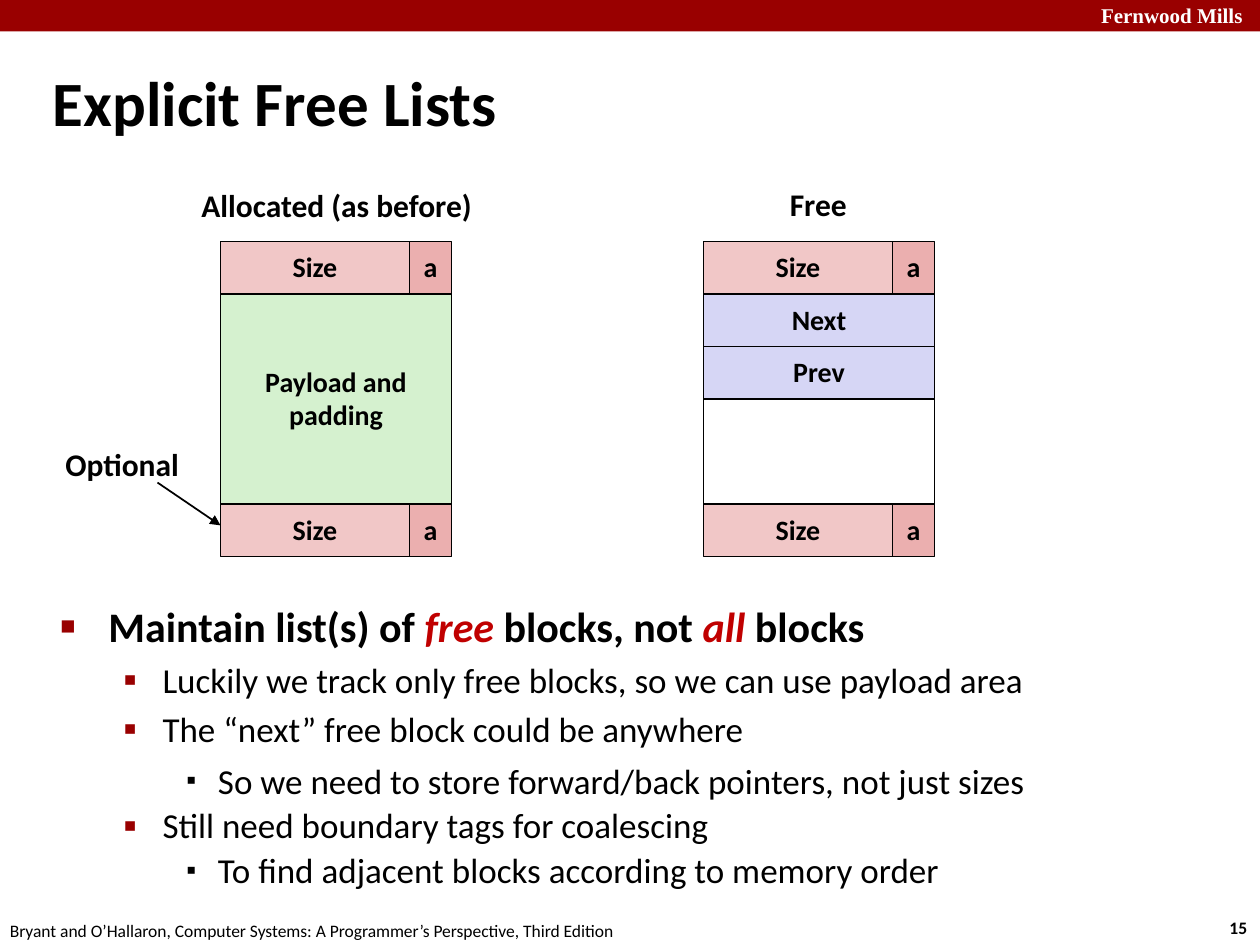
from dataclasses import dataclass

from lxml import etree
from pptx import Presentation, util as u
from pptx.dml.color import RGBColor
from pptx.enum import shapes, text
from pptx.oxml import ns


@dataclass(frozen=True)
class Theme:
    font: str = "Calibri"
    brand_font: str = "Times New Roman"
    ink: str = "000000"
    white: str = "FFFFFF"
    maroon: str = "990000"
    accent: str = "C00000"
    tag: str = "F1C7C7"
    flag: str = "EBAFAF"
    payload: str = "D5F1CF"
    pointer: str = "D6D6F5"
    title: int = 36
    lead: int = 24
    body: int = 20
    label: int = 18
    cell: int = 16
    brand: int = 12
    small: int = 10


T = Theme()
UNIT = 1 / 12  # inches; the block diagrams sit on this grid
ROW, SIZE_W, FLAG_W = 5 * UNIT, 18 * UNIT, 4 * UNIT
TOP = 23 * UNIT

# level: (size, bold, left margin, hanging indent, bullet, bullet colour, bullet percent)
LEVELS = [
    (T.lead, True, 0.38, 0.38, "■", T.maroon, 60),
    (T.body, False, 0.81, 0.31, "▪", T.maroon, 110),
    (T.body, False, 1.25, 0.25, "▪", T.ink, 80),
]


def rgb(value):
    return RGBColor.from_string(value)


def add_child(parent, tag, **attrs):
    return etree.SubElement(parent, ns.qn(tag), attrs)


def add_run(p, content, size, color=T.ink, font=T.font, bold=False, italic=False):
    r = p.add_run()
    r.text = content
    f = r.font
    f.size, f.name, f.bold, f.italic = u.Pt(size), font, bold, italic
    f.color.rgb = rgb(color)


class SlideBuilder:
    def __init__(self, prs, theme):
        self.theme = theme
        self.s = prs.slides.add_slide(prs.slide_layouts[1])

    def place(self, sp, x, y, w, h):
        sp.left, sp.top, sp.width, sp.height = map(u.Inches, (x, y, w, h))

    def title(self, content, *box):
        sp = self.s.shapes.title
        self.place(sp, *box)
        tf = sp.text_frame
        tf.auto_size = text.MSO_AUTO_SIZE.NONE
        tf.vertical_anchor = text.MSO_ANCHOR.MIDDLE
        p = tf.paragraphs[0]
        p.alignment, p.line_spacing = text.PP_ALIGN.LEFT, 0.87
        add_run(p, content, self.theme.title, bold=True)

    def bullets(self, items, *box):
        """Each item is (level, line spacing, pieces); every second piece is emphasised."""
        sp = self.s.placeholders[1]
        self.place(sp, *box)
        tf = sp.text_frame
        tf.auto_size = text.MSO_AUTO_SIZE.NONE
        for i, (level, spacing, pieces) in enumerate(items):
            size, bold, margin, hang, mark, color, percent = LEVELS[level]
            p = tf.add_paragraph() if i else tf.paragraphs[0]
            p.level, p.line_spacing = level, spacing
            p.space_before = u.Pt(size * 0.2)
            pPr = p._p.get_or_add_pPr()
            pPr.set("marL", str(u.Inches(margin)))
            pPr.set("indent", str(-u.Inches(hang)))
            add_child(add_child(pPr, "a:buClr"), "a:srgbClr", val=color)
            add_child(pPr, "a:buSzPct", val=str(percent * 1000))
            add_child(pPr, "a:buFont", typeface="Arial")
            add_child(pPr, "a:buChar", char=mark)
            for j, piece in enumerate(pieces):
                strong = j % 2 == 1
                add_run(p, piece, size, self.theme.accent if strong else self.theme.ink,
                        bold=bold, italic=strong)

    def label(self, content, x, y, w, h, size=T.label, bold=True, **fmt):
        tf = self.s.shapes.add_textbox(*map(u.Inches, (x, y, w, h))).text_frame
        tf.word_wrap = False
        add_run(tf.paragraphs[0], content, size, bold=bold, **fmt)

    def rect(self, x, y, w, h, fill, content="", outlined=True):
        sp = self.s.shapes.add_shape(shapes.MSO_SHAPE.RECTANGLE, *map(u.Inches, (x, y, w, h)))
        sp.shadow.inherit = False
        sp.fill.solid()
        sp.fill.fore_color.rgb = rgb(fill)
        if outlined:
            sp.line.color.rgb, sp.line.width = rgb(self.theme.ink), u.Pt(1)
        else:
            sp.line.fill.background()
        if not content:
            return
        tf = sp.text_frame
        tf.word_wrap = False
        tf.vertical_anchor = text.MSO_ANCHOR.MIDDLE
        for i, line in enumerate(content.split("\n")):
            p = tf.add_paragraph() if i else tf.paragraphs[0]
            p.alignment, p.line_spacing = text.PP_ALIGN.CENTER, 0.98
            add_run(p, line, self.theme.cell, bold=True)

    def block(self, x, fields):
        """Draw a memory block: fields (text, rows, fill) between two boundary tags."""
        y = TOP + ROW
        for content, rows, fill in fields:
            self.rect(x, y, SIZE_W + FLAG_W, rows * ROW, fill, content)
            y += rows * ROW
        for tag_y in (TOP, y):
            self.rect(x, tag_y, SIZE_W, ROW, self.theme.tag, "Size")
            self.rect(x + SIZE_W, tag_y, FLAG_W, ROW, self.theme.flag, "a")

    def arrow(self, x1, y1, x2, y2):
        c = self.s.shapes.add_connector(shapes.MSO_CONNECTOR.STRAIGHT,
                                        *map(u.Inches, (x1, y1, x2, y2)))
        c.line.color.rgb, c.line.width = rgb(self.theme.ink), u.Pt(1)
        add_child(c.line._get_or_add_ln(), "a:tailEnd", type="triangle")
        add_child(c._element.spPr, "a:effectLst")


def main():
    prs = Presentation()
    prs.slide_width, prs.slide_height = u.Inches(10), u.Inches(7.5)
    b = SlideBuilder(prs, T)

    b.rect(0, 0, 10, 0.25, T.maroon, outlined=False)
    b.label("Fernwood Mills", 8.64, -0.03, 1.43, 0.3, size=T.brand,
            color=T.white, font=T.brand_font)
    b.label("15", 9.66, 7.23, 0.37, 0.27, size=T.small)
    b.label("Bryant and O’Hallaron, Computer Systems: A Programmer’s Perspective, Third Edition",
            -0.02, 7.25, 5.08, 0.27, size=T.small, bold=False)

    b.title("Explicit Free Lists", 0.32, 0.53, 6.64, 0.63)
    b.bullets([
        (0, 0.85, ["Maintain list(s) of ", "free", " blocks, not ", "all", " blocks"]),
        (1, 1.0, ["Luckily we track only free blocks, so we can use payload area"]),
        (1, 1.0, ["The “next” free block could be anywhere"]),
        (2, 1.07, ["So we need to store forward/back pointers, not just sizes"]),
        (1, 0.9, ["Still need boundary tags for coalescing"]),
        (2, 0.9, ["To find adjacent blocks according to memory order"]),
    ], 0.38, 4.78, 9.09, 2.02)

    b.block(21 * UNIT, [("Payload and\npadding", 4, T.payload)])
    b.block(67 * UNIT, [("Next", 1, T.pointer), ("Prev", 1, T.pointer), ("", 2, T.white)])

    b.label("Allocated (as before)", 1.5, 1.43, 2.37, 0.4)
    b.label("Free", 6.17, 1.42, 0.66, 0.4)
    b.label("Optional", 0.42, 3.48, 1.11, 0.4)
    b.arrow(1.25, 3.83, 1.75, 4.17)
    prs.save("out.pptx")


if __name__ == "__main__":
    main()
